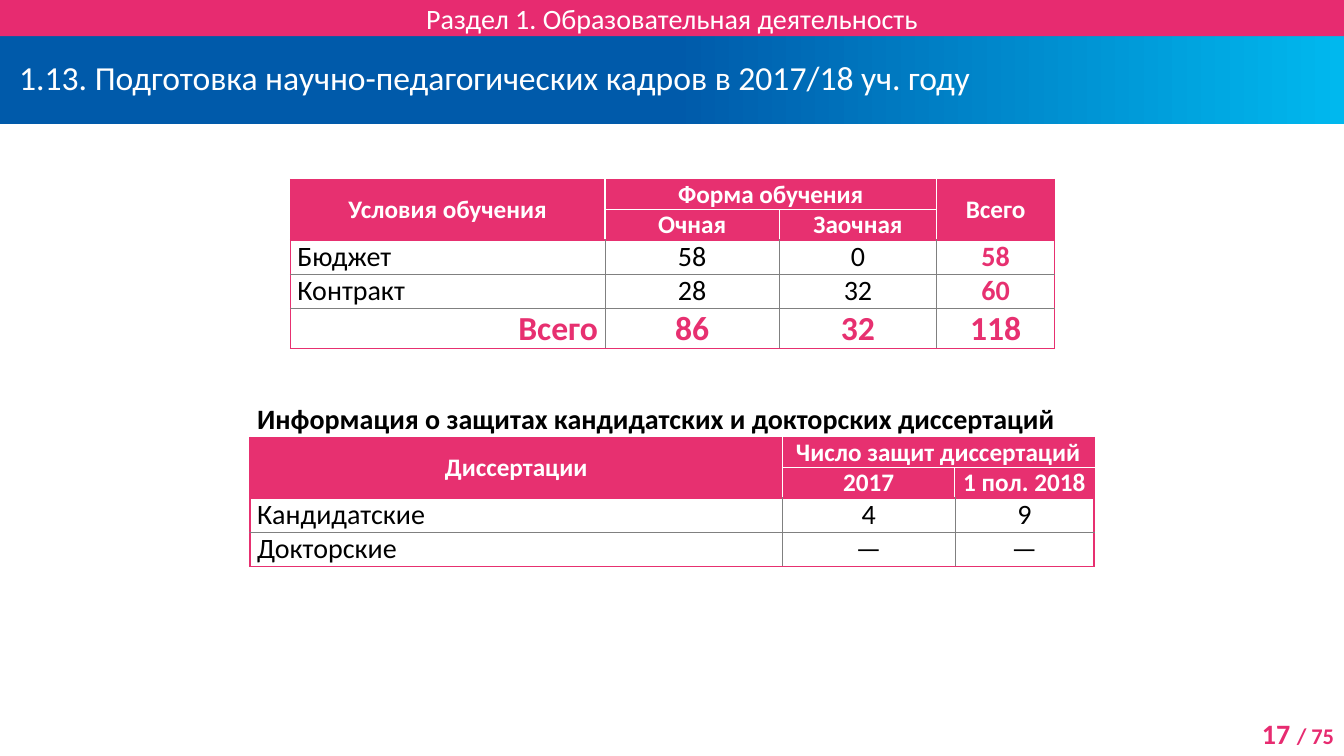
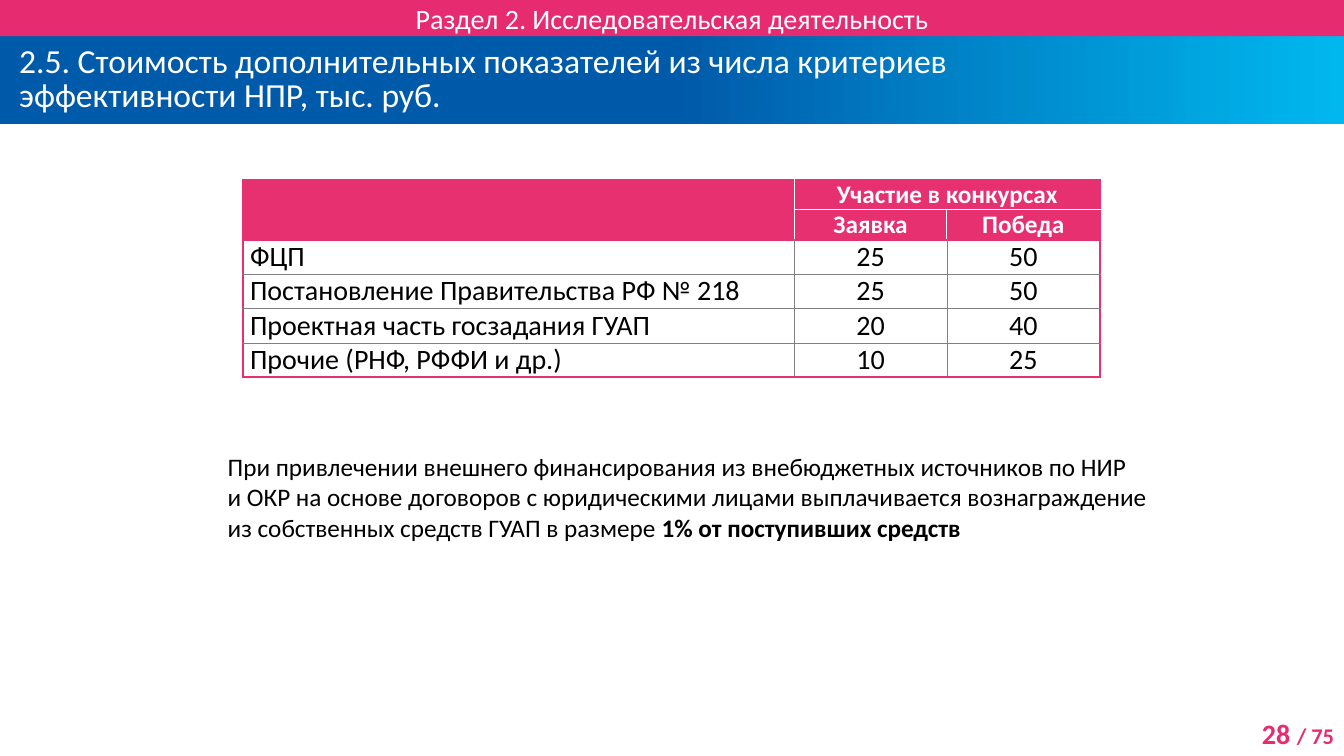
import pptx
import pptx.util
import pptx.dml.color
import pptx.enum.shapes
import pptx.enum.text
import pptx.oxml
import pptx.oxml.ns
from dataclasses import dataclass

Inches = pptx.util.Inches
Pt = pptx.util.Pt
ALIGN = pptx.enum.text.PP_ALIGN
MIDDLE = pptx.enum.text.MSO_ANCHOR.MIDDLE


@dataclass(frozen=True)
class Theme:
    font: str = "Calibri"
    band: str = "E72B70"
    pink: str = "E73070"
    blue: str = "005AAA"
    sky: str = "00B8EE"
    white: str = "FFFFFF"
    black: str = "000000"
    gray: str = "808080"
    title: int = 24
    large: int = 20
    small: int = 18
    count: int = 16
    thick: float = 1
    thin: float = 0.25


THEME = Theme()
WIDTH, HEIGHT = 13.33, 7.5
PAGES = 75

# In a table row, "<" extends the cell on the left and "^" the cell above.
# Row kinds: cap = caption, head = header, body = values, sum = totals.
STUDY = {
    "at": (2.88, 1.78),
    "cols": (3.12, 1.73, 1.56, 1.17),
    "total": 3,
    "rows": [
        ("head", "Условия обучения", "Форма обучения", "<", "Всего"),
        ("head", "^", "Очная", "Заочная", "^"),
        ("body", "Бюджет", "58", "0", "58"),
        ("body", "Контракт", "28", "32", "60"),
        ("sum", "Всего", "86", "32", "118"),
    ],
}
THESES = {
    "at": (2.48, 4),
    "cols": (5.28, 1.71, 1.38),
    "rows": [
        ("cap", "Информация о защитах кандидатских и докторских диссертаций",
         "<", "<"),
        ("head", "Диссертации", "Число защит диссертаций", "<"),
        ("head", "^", "2017", "1 пол. 2018"),
        ("body", "Кандидатские", "4", "9"),
        ("body", "Докторские", "—", "—"),
    ],
}
GRANTS = {
    "at": (2.41, 1.78),
    "cols": (5.47, 1.51, 1.52),
    "rows": [
        ("head", "", "Участие в конкурсах", "<"),
        ("head", "^", "Заявка", "Победа"),
        ("body", "ФЦП", "25", "50"),
        ("body", "Постановление Правительства РФ № 218", "25", "50"),
        ("body", "Проектная часть госзадания ГУАП", "20", "40"),
        ("body", "Прочие (РНФ, РФФИ и др.)", "10", "25"),
    ],
}
SLIDES = [
    {
        "part": "Раздел 1. Образовательная деятельность",
        "title": "1.13. Подготовка научно-педагогических кадров "
                 "в 2017/18 уч. году",
        "page": 17,
        "tables": [STUDY, THESES],
    },
    {
        "part": "Раздел 2. Исследовательская деятельность",
        "title": "2.5. Стоимость дополнительных показателей из числа критериев\n"
                 "эффективности НПР, тыс. руб.",
        "page": 28,
        "tables": [GRANTS],
        "note": [
            "При привлечении внешнего финансирования из внебюджетных "
            "источников по НИР\nи ОКР на основе договоров с юридическими "
            "лицами выплачивается вознаграждение из собственных средств "
            "ГУАП в размере ",
            ("1% от поступивших средств", {"bold": True}),
        ],
    },
]

# Type size, row height and text colour of each row kind
ROWS = {
    "cap": (THEME.large, 0.34, THEME.black),
    "head": (THEME.small, 0.3, THEME.white),
    "body": (THEME.large, 0.34, THEME.black),
    "sum": (THEME.title, 0.4, THEME.pink),
}


def rgb(color):
    return pptx.dml.color.RGBColor.from_string(color)


def write(box, runs, size=THEME.large, color=THEME.black, bold=False,
          align=ALIGN.LEFT, anchor=None, inset=(0.1, 0.05), indent=0,
          leading=None):
    """Fill a text frame or table cell; a run is text or (text, changes)."""
    box.word_wrap = True
    box.margin_left = box.margin_right = Inches(inset[0])
    box.margin_top = box.margin_bottom = Inches(inset[1])
    if anchor is not None:
        box.vertical_anchor = anchor
    para = getattr(box, "text_frame", box).paragraphs[0]
    para.alignment = align
    if indent:
        para._p.get_or_add_pPr().set("marL", str(Inches(indent)))
    if leading:
        para.line_spacing = Pt(leading)
    for item in [runs] if isinstance(runs, str) else runs:
        text, change = (item, {}) if isinstance(item, str) else item
        look = {"size": size, "bold": bold, **change}
        for num, line in enumerate(text.split("\n")):
            if num:
                para.add_line_break()
            run = para.add_run()
            run.text = line
            run.font.name = THEME.font
            run.font.size = Pt(look["size"])
            run.font.bold = look["bold"]
            run.font.color.rgb = rgb(color)


def place(shape, left, top, width, height):
    shape.left, shape.top = Inches(left), Inches(top)
    shape.width, shape.height = Inches(width), Inches(height)


def edge(kind, other):
    """Line colour and width where two row kinds meet (None = outside)."""
    if kind == "cap" and other != "head":
        return None
    if kind == other == "head":
        return THEME.white, THEME.thick
    if other is None or "head" in (kind, other):
        return THEME.pink, THEME.thick
    return THEME.gray, THEME.thin


def outline(cell, edges):
    props = cell._tc.get_or_add_tcPr()
    for side in "LRTB":
        if edges[side] is None:
            continue
        color, width = edges[side]
        props.append(pptx.oxml.parse_xml(
            f'<a:ln{side} {pptx.oxml.ns.nsdecls("a")} w="{Pt(width)}">'
            f'<a:solidFill><a:srgbClr val="{color}"/></a:solidFill>'
            f'</a:ln{side}>'))


def span(rows, row, col):
    """Last row and column of the cell that starts at row, col."""
    low, right = row, col
    while right + 1 < len(rows[row]) and rows[row][right + 1] == "<":
        right += 1
    while low + 1 < len(rows) and rows[low + 1][col] == "^":
        low += 1
    return low, right


def grid(slide, data):
    kinds = [row[0] for row in data["rows"]]
    rows = [row[1:] for row in data["rows"]]
    cols = data["cols"]
    heights = [ROWS[kind][1] for kind in kinds]
    left, top = data["at"]
    table = slide.shapes.add_table(
        len(rows), len(cols), Inches(left), Inches(top),
        Inches(sum(cols)), Inches(sum(heights))).table
    table.first_row = table.horz_banding = False
    for col, width in zip(table.columns, cols):
        col.width = Inches(width)
    for row, height in zip(table.rows, heights):
        row.height = Inches(height)

    for row, kind in enumerate(kinds):
        size, _, color = ROWS[kind]
        for col, text in enumerate(rows[row]):
            cell = table.cell(row, col)
            start = text not in ("<", "^")
            total = col == data.get("total") and kind == "body"
            if kind == "head" or (col and kind != "cap"):
                align = ALIGN.CENTER
            else:
                align = ALIGN.RIGHT if kind == "sum" else ALIGN.LEFT
            write(cell, text if start else "", size=size,
                  color=THEME.pink if total else color,
                  bold=total or kind != "body", align=align,
                  anchor=MIDDLE, inset=(0.07, 0))
            if start:
                low, right = span(rows, row, col)
                if (low, right) != (row, col):
                    cell.merge(table.cell(low, right))
                outline(cell, {
                    "L": edge(kind, kind if col else None),
                    "R": edge(kind, kind if right + 1 < len(cols) else None),
                    "T": edge(kind, kinds[row - 1] if row else None),
                    "B": edge(kind, kinds[low + 1]
                              if low + 1 < len(rows) else None),
                })
            if kind == "head":
                cell.fill.solid()
                cell.fill.fore_color.rgb = rgb(THEME.pink)
            else:
                cell.fill.background()


def label(slide, at, runs, **look):
    box = slide.shapes.add_textbox(*map(Inches, at))
    write(box.text_frame, runs, **look)


def bands(slide, part, title, page):
    """Title, section band and page number."""
    head = slide.shapes.title
    place(head, 0, 0.36, WIDTH, 0.87)
    head.fill.gradient()
    head.fill.gradient_angle = 0
    stops = zip(head.fill.gradient_stops, (0.5, 1), (THEME.blue, THEME.sky))
    for stop, spot, color in stops:
        stop.position = spot
        stop.color.rgb = rgb(color)
    head.text_frame.auto_size = pptx.enum.text.MSO_AUTO_SIZE.NONE
    write(head.text_frame, title, size=THEME.title, color=THEME.white,
          anchor=MIDDLE, inset=(0.1, 0), indent=0.09, leading=THEME.title)

    band = slide.shapes.add_shape(
        pptx.enum.shapes.MSO_SHAPE.RECTANGLE, 0, 0,
        Inches(WIDTH), Inches(0.36))
    band.shadow.inherit = False
    band.fill.solid()
    band.fill.fore_color.rgb = rgb(THEME.band)
    band.line.fill.background()
    write(band.text_frame, part, color=THEME.white, align=ALIGN.CENTER,
          anchor=MIDDLE, inset=(0, 0))

    label(slide, (12.13, 7.06, 1.2, 0.44),
          [f"{page} ", (f"/ {PAGES}", {"size": THEME.count})],
          color=THEME.band, bold=True, align=ALIGN.RIGHT)


def main():
    deck = pptx.Presentation()
    deck.slide_width, deck.slide_height = Inches(WIDTH), Inches(HEIGHT)
    layout = deck.slide_layouts.get_by_name("Title Only")
    for data in SLIDES:
        slide = deck.slides.add_slide(layout)
        bands(slide, data["part"], data["title"], data["page"])
        for table in data["tables"]:
            grid(slide, table)
        if "note" in data:
            label(slide, (2.16, 4.43, 9.36, 1.01), data["note"],
                  size=THEME.small)
    deck.save("out.pptx")


if __name__ == "__main__":
    main()
